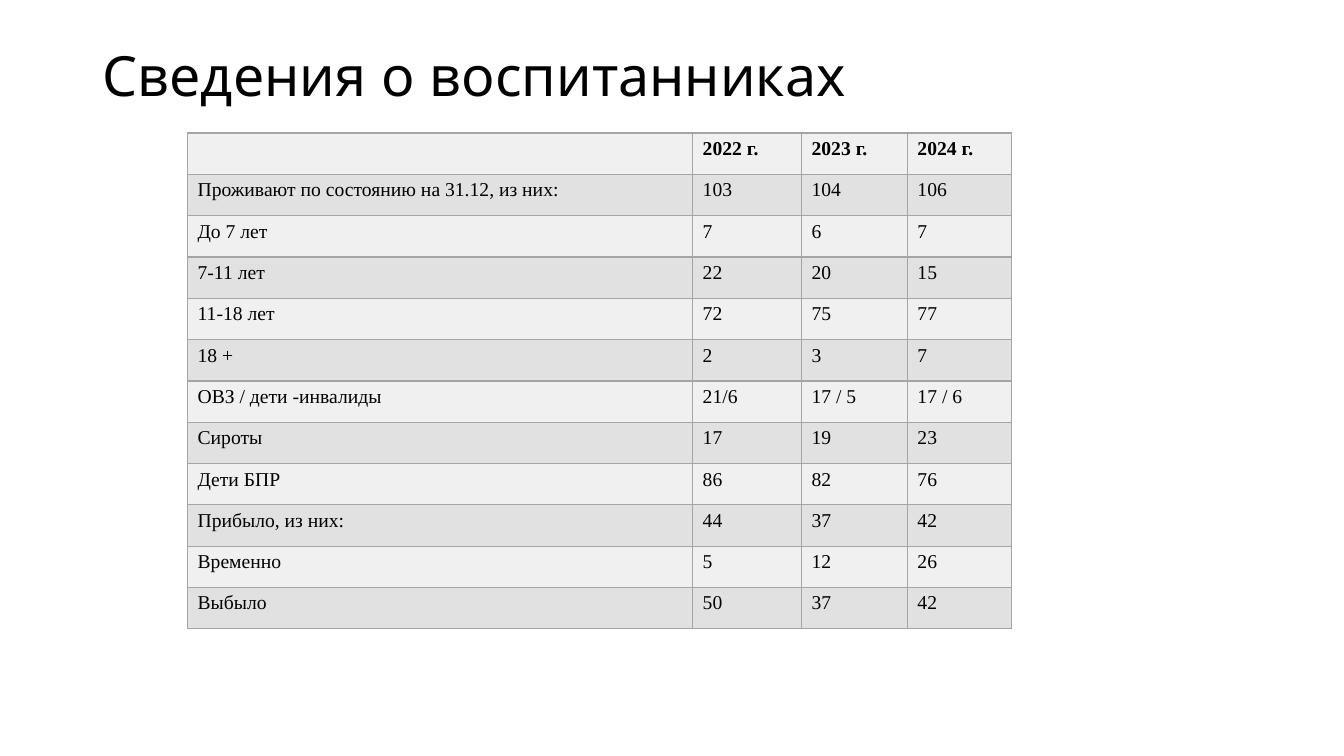
import pptx
import pptx.dml.color
import pptx.enum.text
import pptx.oxml.ns
import pptx.util
from lxml import etree

Inches = pptx.util.Inches
RGBColor = pptx.dml.color.RGBColor

BLACK = RGBColor(0x00, 0x00, 0x00)
LIGHT = RGBColor(0xF0, 0xF0, 0xF0)
DARK = RGBColor(0xE1, 0xE1, 0xE1)
GREY = RGBColor(0xA5, 0xA5, 0xA5)

WIDTHS = [5.01, 1.08, 1.05, 1.03]
HEIGHT = 0.41
ROWS = [
    ("", "2022 г.", "2023 г.", "2024 г."),
    ("Проживают по состоянию на 31.12, из них:", "103", "104", "106"),
    ("До 7 лет", "7", "6", "7"),
    ("7-11 лет", "22", "20", "15"),
    ("11-18 лет", "72", "75", "77"),
    ("18 +", "2", "3", "7"),
    ("ОВЗ / дети -инвалиды", "21/6", "17 / 5", "17 / 6"),
    ("Сироты", "17", "19", "23"),
    ("Дети БПР", "86", "82", "76"),
    ("Прибыло, из них:", "44", "37", "42"),
    ("Временно", "5", "12", "26"),
    ("Выбыло", "50", "37", "42"),
]


def write(frame, text, size=14, face="Times New Roman", color=BLACK, bold=False):
    run = frame.paragraphs[0].add_run()
    run.text = text
    font = run.font
    font.size = pptx.util.Pt(size)
    font.name = face
    font.color.rgb = color
    font.bold = bold


def edge(cell, color=GREY, width=1):
    """Draw a line on all four sides of a cell."""
    props = cell._tc.get_or_add_tcPr()
    qn = pptx.oxml.ns.qn
    for side in ("a:lnL", "a:lnR", "a:lnT", "a:lnB"):
        line = etree.SubElement(props, qn(side), w=str(pptx.util.Pt(width)))
        fill = etree.SubElement(line, qn("a:solidFill"))
        etree.SubElement(fill, qn("a:srgbClr"), val=str(color))


def title(slide, left, top, width, height):
    box = slide.shapes.add_textbox(
        Inches(left), Inches(top), Inches(width), Inches(height))
    frame = box.text_frame
    frame.word_wrap = True
    frame.vertical_anchor = pptx.enum.text.MSO_ANCHOR.MIDDLE
    write(frame, "Сведения о воспитанниках", size=39.6, face="Quicksand")


def table(slide, left, top):
    grid = slide.shapes.add_table(
        len(ROWS), len(WIDTHS), Inches(left), Inches(top),
        Inches(sum(WIDTHS)), Inches(HEIGHT * len(ROWS))).table
    for column, width in zip(grid.columns, WIDTHS):
        column.width = Inches(width)
    for r, row in enumerate(ROWS):
        grid.rows[r].height = Inches(HEIGHT)
        for c, text in enumerate(row):
            cell = grid.cell(r, c)
            edge(cell)
            cell.fill.solid()
            cell.fill.fore_color.rgb = DARK if r % 2 else LIGHT
            write(cell.text_frame, text, bold=r == 0)


def main():
    deck = pptx.Presentation()
    deck.slide_width = Inches(13.33)
    deck.slide_height = Inches(7.5)
    slide = deck.slides.add_slide(deck.slide_layouts[6])
    title(slide, 0.92, 0.4, 11.68, 0.68)
    table(slide, 1.86, 1.32)
    deck.save("out.pptx")


if __name__ == "__main__":
    main()
